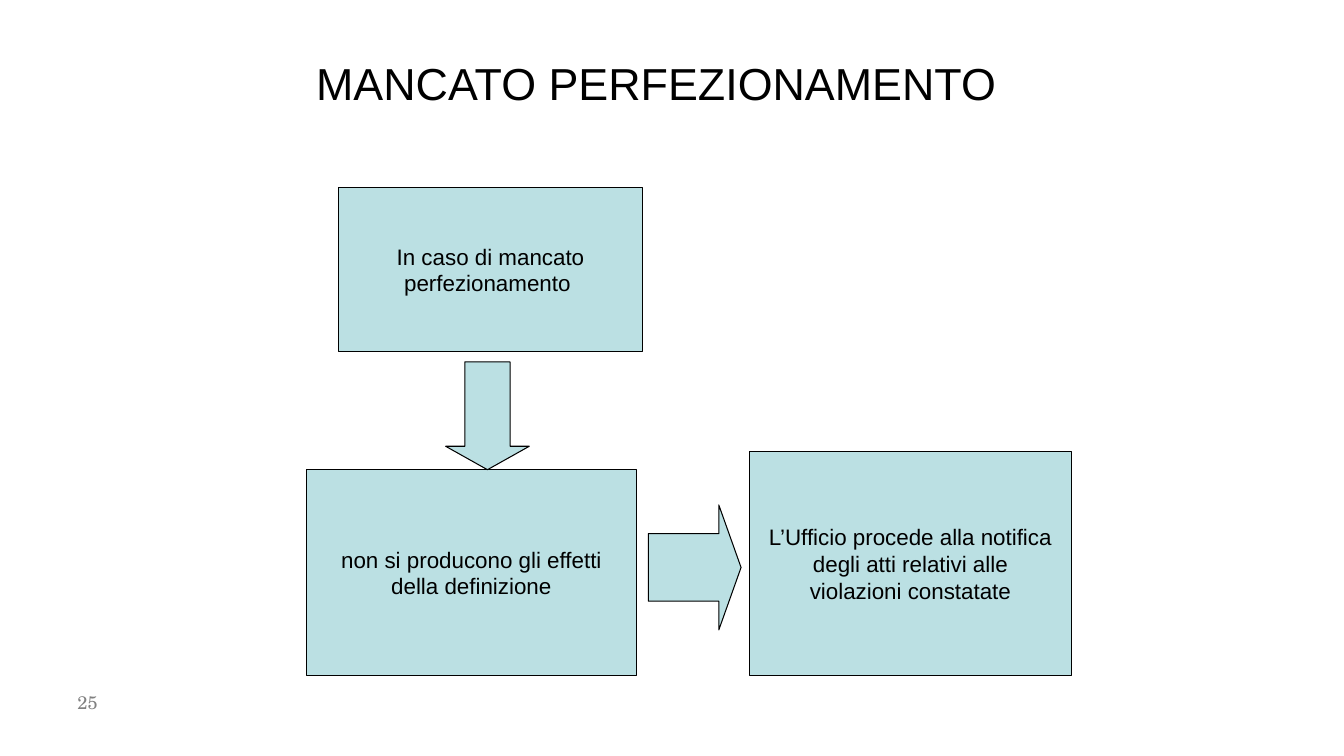
from pptx import Presentation
from pptx.dml.color import RGBColor
from pptx.enum.shapes import MSO_SHAPE as Shape
from pptx.enum.text import MSO_ANCHOR as Anchor, PP_ALIGN as Align
from pptx.util import Inches, Pt

TITLE = ("MANCATO PERFEZIONAMENTO", (0.32, 0.52, 12.38, 0.6))
PAGE_NUMBER = ("25", (0.67, 6.83, 3.11, 0.52))
STEPS = [
    (["In caso di mancato", "perfezionamento "], (3.36, 1.86, 3.01, 1.63)),
    (["non si producono gli effetti", "della definizione"], (3.04, 4.66, 3.27, 2.04)),
    (["L’Ufficio procede alla notifica", "degli atti relativi alle", "violazioni constatate"],
     (7.43, 4.48, 3.2, 2.22)),
]
ARROWS = [
    (Shape.DOWN_ARROW, (4.42, 3.59, 0.83, 1.07), (0.54, 0.28)),
    (Shape.RIGHT_ARROW, (6.43, 5.01, 0.92, 1.24), (0.54, 0.24)),
]
THEME = {
    "fill": RGBColor.from_string("BBE0E3"),
    "ink": RGBColor.from_string("000000"),
    "muted": RGBColor.from_string("808080"),
    "font": "Arial",
    "number_font": "TeX Gyre Schola",
    "title_size": Pt(32),
    "step_size": Pt(16),
    "number_size": Pt(13),
    "line": Pt(0.75),
}


def write(box, text, size, color, font, align, anchor, wrap):
    frame = box.text_frame
    frame.text = text
    frame.word_wrap = wrap
    frame.vertical_anchor = anchor
    for para in frame.paragraphs:
        para.alignment = align
        for span in para.runs:
            span.font.name = font
            span.font.size = size
            span.font.color.rgb = color


def add_block(page, kind, place):
    block = page.shapes.add_shape(kind, *map(Inches, place))
    block.shadow.inherit = False
    block.fill.solid()
    block.fill.fore_color.rgb = THEME["fill"]
    block.line.color.rgb = THEME["ink"]
    block.line.width = THEME["line"]
    return block


def main():
    deck = Presentation()
    deck.slide_width, deck.slide_height = Inches(13.33), Inches(7.5)
    page = deck.slides.add_slide(deck.slide_layouts[6])

    text, place = TITLE
    title = page.shapes.add_textbox(*map(Inches, place))
    write(title, text, THEME["title_size"], THEME["ink"], THEME["font"],
          Align.CENTER, Anchor.MIDDLE, True)

    text, place = PAGE_NUMBER
    number = page.shapes.add_textbox(*map(Inches, place))
    write(number, text, THEME["number_size"], THEME["muted"], THEME["number_font"],
          Align.LEFT, Anchor.TOP, True)
    number.text_frame.paragraphs[0].line_spacing = 0.93

    for lines, place in STEPS:
        step = add_block(page, Shape.RECTANGLE, place)
        write(step, "\n".join(lines), THEME["step_size"], THEME["ink"], THEME["font"],
              Align.CENTER, Anchor.MIDDLE, False)

    for kind, place, (shaft, head) in ARROWS:
        arrow = add_block(page, kind, place)
        arrow.adjustments[0] = shaft
        arrow.adjustments[1] = head

    deck.save("out.pptx")


if __name__ == "__main__":
    main()
